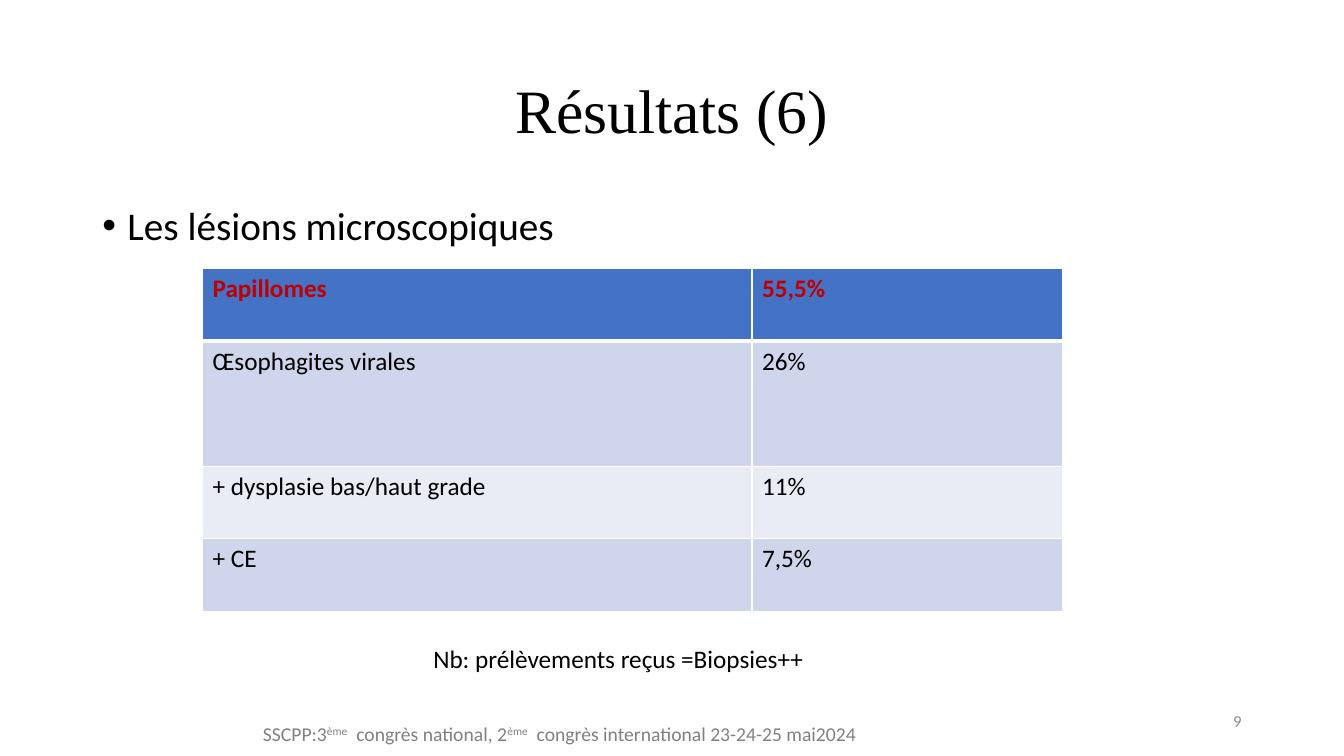
from dataclasses import dataclass
from lxml import etree
from pptx import Presentation
from pptx import util as u
from pptx.dml import color
from pptx.enum import text
from pptx.oxml import ns

COLORS = {"black": "000000", "red": "C00000", "blue": "4472C4", "band": "CFD5EA",
          "pale": "E9EBF5", "white": "FFFFFF", "grey": "808080", "number": "8C8C8C"}


@dataclass
class Label:
    runs: list[str]  # every second run is superscript
    box: tuple[float, float, float, float]
    size: float
    color: str = "black"
    align: text.PP_ALIGN = text.PP_ALIGN.LEFT
    anchor: text.MSO_ANCHOR = text.MSO_ANCHOR.TOP
    bullet: bool = False


@dataclass
class Row:
    cells: tuple[str, str]
    height: float
    fill: str
    color: str = "black"
    bold: bool = False


LABELS = [
    Label(["Les lésions microscopiques"], (66, 144, 828, 342.72), 28, bullet=True),
    Label(["Nb: prélèvements reçus =Biopsies++"], (302.4, 455.76, 428.4, 29), 18),
    Label(["SSCPP:3", "ème", "  congrès national, 2", "ème",
           "  congrès international 23-24-25 mai2024"],
          (180.72, 511.92, 645.84, 24.48), 14, "grey"),
    Label(["9"], (678, 500.4, 216, 28.8), 12, "number",
          text.PP_ALIGN.RIGHT, text.MSO_ANCHOR.MIDDLE),
]
ROWS = [
    Row(("Papillomes", "55,5%"), 51.84, "blue", "red", True),
    Row(("Œsophagites virales", "26%"), 89.28, "band"),
    Row(("+ dysplasie bas/haut grade", "11%"), 51.84, "pale"),
    Row(("+ CE", "7,5%"), 51.84, "band"),
]
COLUMNS = (392.4, 221.76)


def rgb(name: str) -> color.RGBColor:
    return color.RGBColor.from_string(COLORS[name])


def style(font, size: float, fill: str, name: str = "Calibri", bold: bool = False) -> None:
    for key, value in {"size": u.Pt(size), "name": name, "bold": bold}.items():
        setattr(font, key, value)
    font.color.rgb = rgb(fill)


def place(sp, box: tuple[float, float, float, float]) -> None:
    for key, value in zip(("left", "top", "width", "height"), box):
        setattr(sp, key, u.Pt(value))


def add_bullet(p) -> None:
    pPr = p._p.get_or_add_pPr()
    pPr.set("marL", str(u.Pt(18)))
    pPr.set("indent", str(-u.Pt(18)))
    etree.SubElement(pPr, ns.qn("a:buFont")).set("typeface", "Arial")
    etree.SubElement(pPr, ns.qn("a:buChar")).set("char", "•")
    p.line_spacing = 0.9


def add_label(s, label: Label) -> None:
    sp = s.shapes.add_textbox(*map(u.Pt, label.box))
    tf = sp.text_frame
    tf.word_wrap = True
    tf.vertical_anchor = label.anchor
    p = tf.paragraphs[0]
    p.alignment = label.align
    if label.bullet:
        add_bullet(p)
    for i, words in enumerate(label.runs):
        r = p.add_run()
        r.text = words
        style(r.font, label.size, label.color)
        if i % 2:
            r._r.get_or_add_rPr().set("baseline", "30000")


def add_borders(cell, top: float, bottom: float) -> None:
    tcPr = cell._tc.get_or_add_tcPr()
    for side, width in {"L": 1, "R": 1, "T": top, "B": bottom}.items():
        ln = etree.SubElement(tcPr, ns.qn(f"a:ln{side}"), w=str(u.Pt(width)))
        fill = etree.SubElement(ln, ns.qn("a:solidFill"))
        etree.SubElement(fill, ns.qn("a:srgbClr"), val=COLORS["white"])


def add_results(s, rows: list[Row]) -> None:
    height = sum(row.height for row in rows)
    table = s.shapes.add_table(len(rows), len(COLUMNS), u.Pt(144.72), u.Pt(192),
                               u.Pt(sum(COLUMNS)), u.Pt(height)).table
    for column, width in zip(table.columns, COLUMNS):
        column.width = u.Pt(width)
    for i, row in enumerate(rows):
        table.rows[i].height = u.Pt(row.height)
        for j, words in enumerate(row.cells):
            cell = table.cell(i, j)
            add_borders(cell, 3 if i == 1 else 1, 3 if i == 0 else 1)
            cell.fill.solid()
            cell.fill.fore_color.rgb = rgb(row.fill)
            r = cell.text_frame.paragraphs[0].add_run()
            r.text = words
            style(r.font, 18, row.color, bold=row.bold)


def main() -> None:
    prs = Presentation()
    prs.slide_width, prs.slide_height = u.Pt(960), u.Pt(540)
    s = prs.slides.add_slide(prs.slide_layouts[5])

    # Title
    title = s.shapes.title
    place(title, (66, 28.8, 828, 104.4))
    tf = title.text_frame
    tf.text = "Résultats (6)"
    tf.auto_size = text.MSO_AUTO_SIZE.NONE
    tf.vertical_anchor = text.MSO_ANCHOR.MIDDLE
    p = tf.paragraphs[0]
    for key, value in {"alignment": text.PP_ALIGN.CENTER, "line_spacing": 0.9}.items():
        setattr(p, key, value)
    style(p.runs[0].font, 44, "black", "Times New Roman")

    # Bullet, table, note, footer and slide number
    bullet, *notes = LABELS
    add_label(s, bullet)
    add_results(s, ROWS)
    for label in notes:
        add_label(s, label)

    prs.save("out.pptx")


if __name__ == "__main__":
    main()
